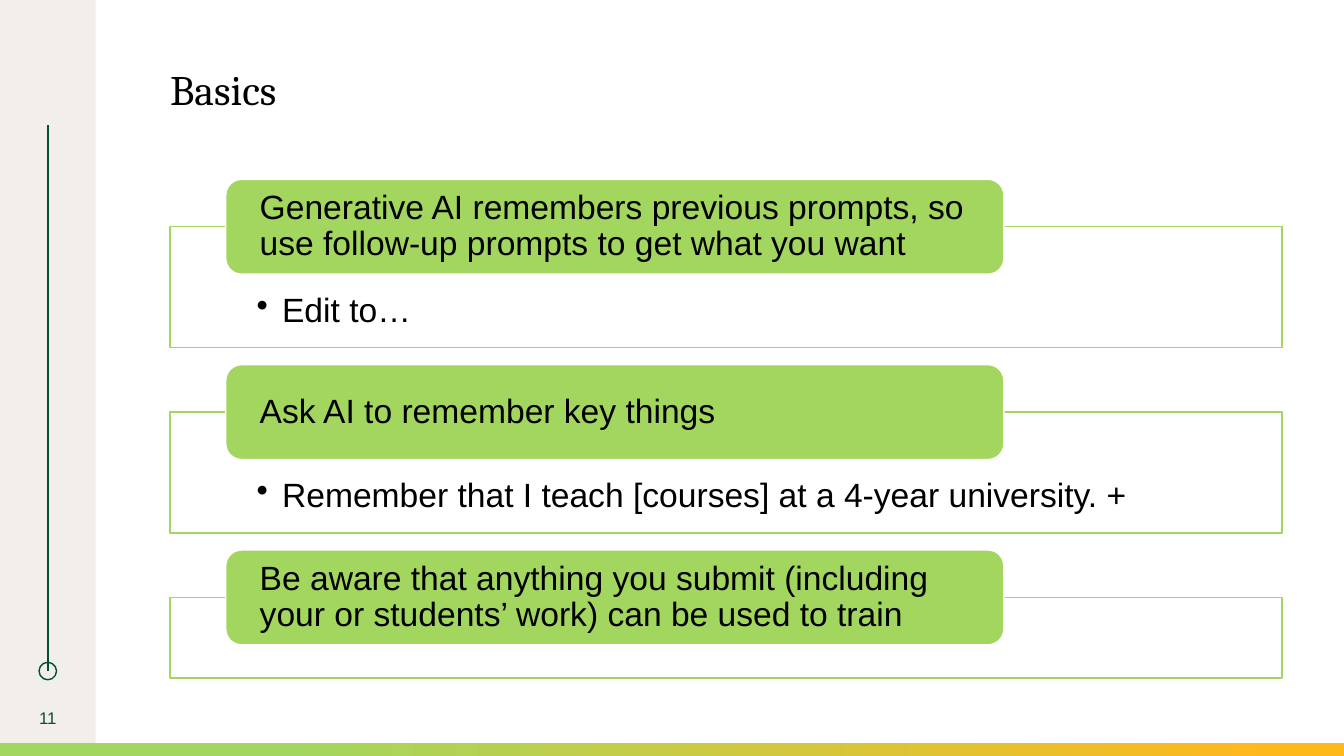
from lxml.etree import SubElement
from pptx import Presentation
from pptx.dml.color import RGBColor
from pptx.enum.shapes import MSO_CONNECTOR, MSO_SHAPE
from pptx.enum.text import MSO_ANCHOR, MSO_AUTO_SIZE, PP_ALIGN
from pptx.oxml.ns import qn
from pptx.util import Cm, Pt

TITLE = "Basics"
PAGE = "11"
# heading, bullet below it, panel height in cm
SECTIONS = [
    ("Generative AI remembers previous prompts, so use follow-up prompts to get what you want",
     "Edit to…", 3.05),
    ("Ask AI to remember key things",
     "Remember that I teach [courses] at a 4-year university. +", 3.05),
    ("Be aware that anything you submit (including your or students’ work) can be used to train",
     None, 2.03),
]
COLORS = {"black": "000000", "white": "FFFFFF", "sand": "F2EEE9",
          "forest": "005030", "lime": "A3D65E", "amber": "FFB81C"}

# Lengths in cm
SLIDE_W, SLIDE_H = 33.87, 19.05
SIDEBAR_W = 2.41
STRIPE_H = 0.33
RING = 0.44
RAIL_TOP, RAIL_END = 3.15, 16.91
PANEL_LEFT, PANEL_W = 4.29, 28.02
HEADING_LEFT, HEADING_W, HEADING_H = 5.69, 19.61, 2.39
FIRST_TOP, PITCH = 4.52, 4.67


def rgb(name):
    return RGBColor.from_string(COLORS[name])


def add_block(slide, kind, left, top, width, height, fill=None, line=None):
    block = slide.shapes.add_shape(kind, Cm(left), Cm(top), Cm(width), Cm(height))
    block.shadow.inherit = False
    if fill:
        block.fill.solid()
        block.fill.fore_color.rgb = rgb(fill)
    else:
        block.fill.background()
    if line:
        block.line.color.rgb = rgb(line)
        block.line.width = Pt(1)
    else:
        block.line.fill.background()
    return block


def write(frame, text, size, margins, anchor, align=PP_ALIGN.LEFT,
          font="Arial", color="black", bullet=False):
    """Fill a text frame with one paragraph; margins are left, top, right, bottom."""
    frame.word_wrap = True
    frame.auto_size = MSO_AUTO_SIZE.NONE
    frame.vertical_anchor = anchor
    (frame.margin_left, frame.margin_top,
     frame.margin_right, frame.margin_bottom) = map(Cm, margins)
    paragraph = frame.paragraphs[0]
    paragraph.text = text
    paragraph.alignment = align
    paragraph.line_spacing = 0.9
    if bullet:
        properties = paragraph._p.get_or_add_pPr()
        properties.set("marL", str(Cm(0.64)))
        properties.set("indent", str(-Cm(0.64)))
        SubElement(properties, qn("a:buChar"), char="•")
    paragraph.font.name = font
    paragraph.font.size = Pt(size)
    paragraph.font.color.rgb = rgb(color)


def add_decoration(slide):
    add_block(slide, MSO_SHAPE.RECTANGLE, 0, 0, SIDEBAR_W, SLIDE_H, "sand")
    center = SIDEBAR_W / 2
    rail = slide.shapes.add_connector(MSO_CONNECTOR.STRAIGHT, Cm(center), Cm(RAIL_TOP),
                                      Cm(center), Cm(RAIL_END))
    rail.line.color.rgb = rgb("forest")
    rail.line.width = Pt(1)
    SubElement(rail._element.spPr, qn("a:effectLst"))
    add_block(slide, MSO_SHAPE.OVAL, center - RING / 2, RAIL_END - RING / 2,
              RING, RING, line="forest")

    stripe = add_block(slide, MSO_SHAPE.RECTANGLE, 0, SLIDE_H - STRIPE_H, SLIDE_W, STRIPE_H)
    stripe.fill.gradient()
    stripe.fill.gradient_angle = 0
    for stop, (color, position) in zip(stripe.fill.gradient_stops,
                                       [("lime", 0.21), ("amber", 0.95)]):
        stop.color.rgb = rgb(color)
        stop.position = position

    number = slide.shapes.add_textbox(0, Cm(17.6), Cm(SIDEBAR_W), Cm(1.02))
    write(number.text_frame, PAGE, 12, (0.25, 0.13, 0.25, 0.13), MSO_ANCHOR.MIDDLE,
          PP_ALIGN.CENTER, color="forest")


def add_section(slide, top, heading, bullet, panel_height):
    panel = add_block(slide, MSO_SHAPE.RECTANGLE, PANEL_LEFT, top + HEADING_H / 2,
                      PANEL_W, panel_height, "white", "lime")
    panel_color = panel._element.spPr.find(qn("a:solidFill")).find(qn("a:srgbClr"))
    SubElement(panel_color, qn("a:alpha"), val="90000")
    if bullet:
        write(panel.text_frame, bullet, 24, (2.18, 1.68, 2.18, 0.48),
              MSO_ANCHOR.TOP, bullet=True)
    tab = add_block(slide, MSO_SHAPE.ROUNDED_RECTANGLE, HEADING_LEFT, top,
                    HEADING_W, HEADING_H, "lime", "white")
    # The preset's rounded corners already inset the text by about 0.12 cm
    write(tab.text_frame, heading, 24, (0.74, 0, 0.74, 0), MSO_ANCHOR.MIDDLE)


def main():
    deck = Presentation()
    deck.slide_width, deck.slide_height = Cm(SLIDE_W), Cm(SLIDE_H)
    slide = deck.slides.add_slide(deck.slide_layouts[5])

    add_decoration(slide)
    title = slide.shapes.title
    title.left, title.top, title.width, title.height = Cm(4.29), Cm(1.75), Cm(10.46), Cm(1.14)
    write(title.text_frame, TITLE, 30, (0, 0, 0, 0), MSO_ANCHOR.TOP, font="Cambria")
    for row, section in enumerate(SECTIONS):
        add_section(slide, FIRST_TOP + row * PITCH, *section)

    deck.save("out.pptx")


if __name__ == "__main__":
    main()
